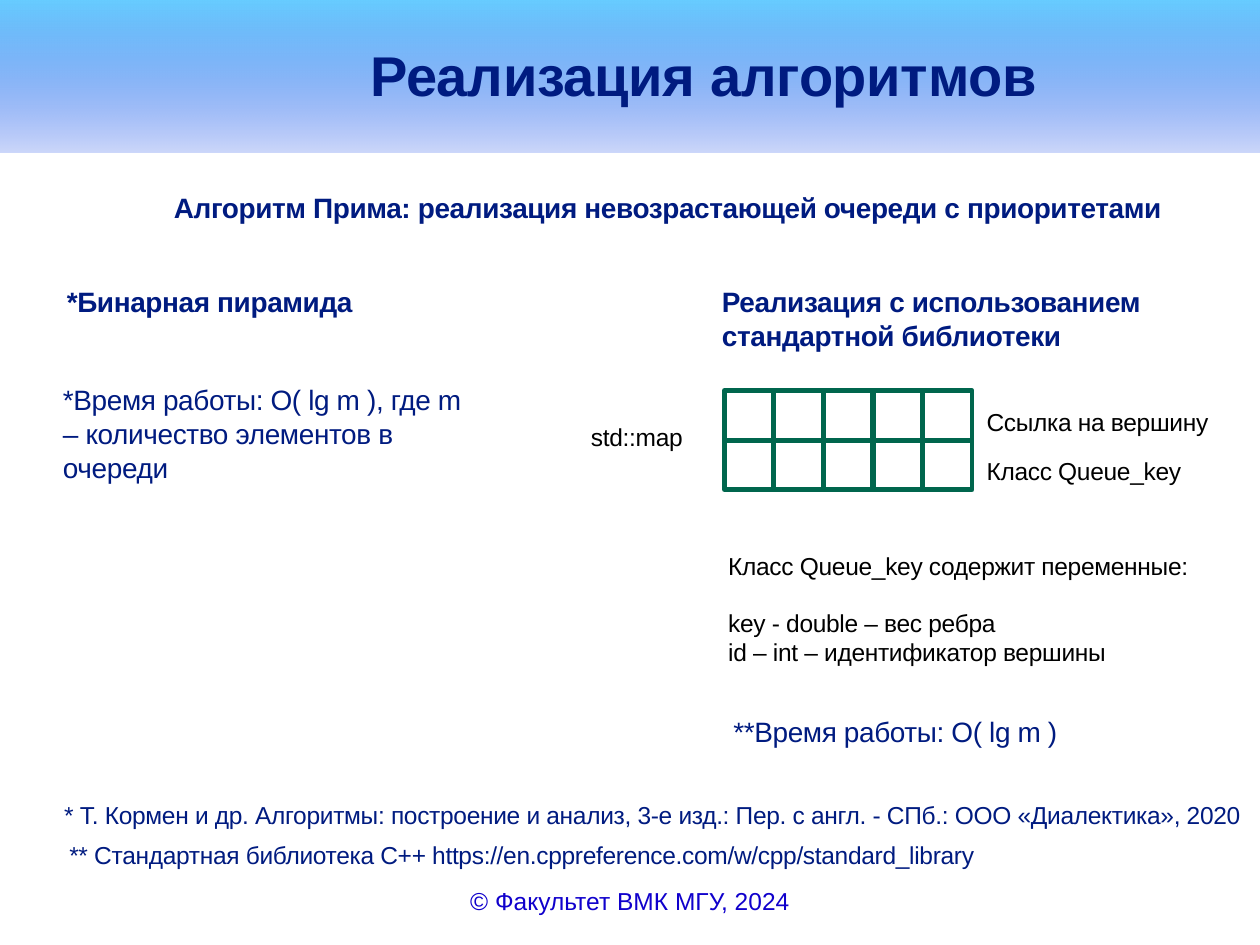
"""Build the slide on implementing a priority queue for Prim's algorithm."""
import pptx
import pptx.dml.color
import pptx.enum.shapes
import pptx.enum.text
import pptx.util
from lxml import etree

COLORS = {
    "navy": "001B80",
    "black": "000000",
    "footer": "1000CC",
    "sky": "66CCFF",
    "blue": "063DE8",
    "white": "FFFFFF",
    "green": "00664D",
}
COLUMNS, ROWS = 100, 75


class SlideBuilder:
    """Hold the style and the current slide, measured on a grid of columns and rows."""

    def __init__(self, deck):
        self.font = "Arial"
        self.column = deck.slide_width / COLUMNS
        self.row = deck.slide_height / ROWS
        self.page = deck.slides.add_slide(deck.slide_layouts[6])

    def place(self, left, top, width, height):
        return (round(left * self.column), round(top * self.row),
                round(width * self.column), round(height * self.row))

    def color(self, name):
        return pptx.dml.color.RGBColor.from_string(COLORS[name])

    def rectangle(self, parent, area):
        kind = pptx.enum.shapes.MSO_SHAPE.RECTANGLE
        shape = parent.shapes.add_shape(kind, *self.place(*area))
        shape.shadow.inherit = False
        return shape

    def band(self, area, start, end, end_opacity):
        shape = self.rectangle(self.page, area)
        shape.line.fill.background()
        shape.fill.gradient()
        shape.fill.gradient_angle = 270
        for stop, name, position in zip(shape.fill.gradient_stops, (start, end), (0, 1)):
            stop.color.rgb = self.color(name)
            stop.position = position
        last = shape._element.xpath(".//a:gs/a:srgbClr")[-1]
        alpha = etree.SubElement(last, pptx.oxml.ns.qn("a:alpha"))
        alpha.set("val", str(end_opacity * 1000))

    def cells(self, left, top, side, across, down):
        group = self.page.shapes.add_group_shape()
        for index in range(across * down):
            line, place = divmod(index, across)
            shape = self.rectangle(group, (left + place * side, top + line * side, side, side))
            shape.fill.solid()
            shape.fill.fore_color.rgb = self.color("white")
            shape.line.color.rgb = self.color("green")
            shape.line.width = pptx.util.Pt(2.83)

    def text(self, area, lines, size=14, color="navy", bold=False,
             align="LEFT", insets=(0, 0.01), spacing=-20, first_gap=0):
        box = self.page.shapes.add_textbox(*self.place(*area))
        frame = box.text_frame
        frame.word_wrap = True
        frame.auto_size = pptx.enum.text.MSO_AUTO_SIZE.SHAPE_TO_FIT_TEXT
        side, top = insets
        frame.margin_left = frame.margin_right = pptx.util.Inches(side)
        frame.margin_top = pptx.util.Inches(top)
        frame.margin_bottom = pptx.util.Inches(top if side else 0)
        for number, line in enumerate(lines):
            para = frame.add_paragraph() if number else frame.paragraphs[0]
            para.alignment = getattr(pptx.enum.text.PP_ALIGN, align)
            if number == 1 and first_gap:
                para.space_before = pptx.util.Pt(first_gap)
            span = para.add_run()
            span.text = line
            span.font.name = self.font
            span.font.size = pptx.util.Pt(size)
            span.font.bold = bold
            span.font.color.rgb = self.color(color)
            if spacing:
                span._r.get_or_add_rPr().set("spc", str(spacing))


def main():
    deck = pptx.Presentation()
    deck.slide_width = pptx.util.Inches(10)
    deck.slide_height = pptx.util.Inches(7.5)
    slide = SlideBuilder(deck)

    slide.band((0, 0, COLUMNS, 12.1), "sky", "blue", 20)
    slide.text((0, 69.8, COLUMNS, 3.3), ["© Факультет ВМК МГУ, 2024"], color="footer",
               align="CENTER", insets=(0.1, 0.05), spacing=0)
    slide.text((29.4, 3.1, 54.6, 5.5), ["Реализация алгоритмов"], size=32, bold=True)

    for area, heading in (
        ((13.8, 15, 78.7, 2.8),
         "Алгоритм Прима: реализация невозрастающей очереди с приоритетами"),
        ((5.3, 22.5, 24.2, 2.8), "*Бинарная пирамида"),
        ((57.3, 22.5, 34.4, 5.5), "Реализация с использованием стандартной библиотеки"),
    ):
        slide.text(area, [heading], size=16, bold=True)

    for area, note in (
        ((5, 30.3, 32.3, 8.1),
         "*Время работы: O( lg m ), где m – количество элементов в очереди"),
        ((58.2, 56.6, 28.1, 2.8), "**Время работы: O( lg m )"),
    ):
        slide.text(area, [note], size=16)

    slide.cells(57.5, 31, 3.93, across=5, down=2)
    for area, label in (
        ((46.9, 33.4, 7.9, 2.5), "std::map"),
        ((78.3, 32.2, 18.1, 2.5), "Ссылка на вершину"),
        ((78.3, 36.1, 20.1, 2.5), "Класс Queue_key"),
    ):
        slide.text(area, [label], color="black")

    slide.text((57.8, 43.6, 36.6, 9.4), [
        "Класс Queue_key содержит переменные:",
        "key - double – вес ребра",
        "id – int – идентификатор вершины",
    ], color="black", first_gap=16)

    for area, source in (
        ((5.1, 63.4, 94.5, 2.5),
         "* Т. Кормен и др. Алгоритмы: построение и анализ, 3-е изд.: "
         "Пер. с англ. - СПб.: ООО «Диалектика», 2020"),
        ((5.5, 66.6, 94.5, 2.5),
         "** Стандартная библиотека C++ https://en.cppreference.com/w/cpp/standard_library"),
    ):
        slide.text(area, [source])

    deck.save("out.pptx")


if __name__ == "__main__":
    main()
